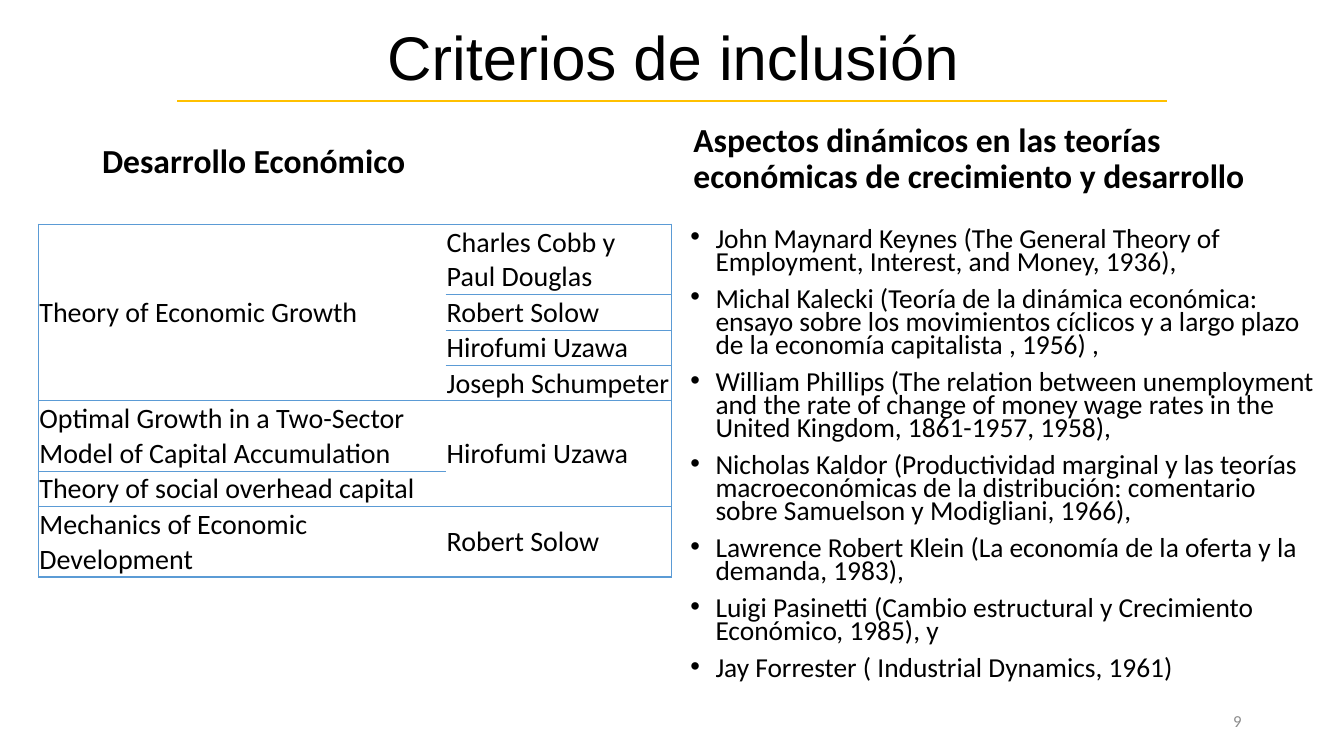
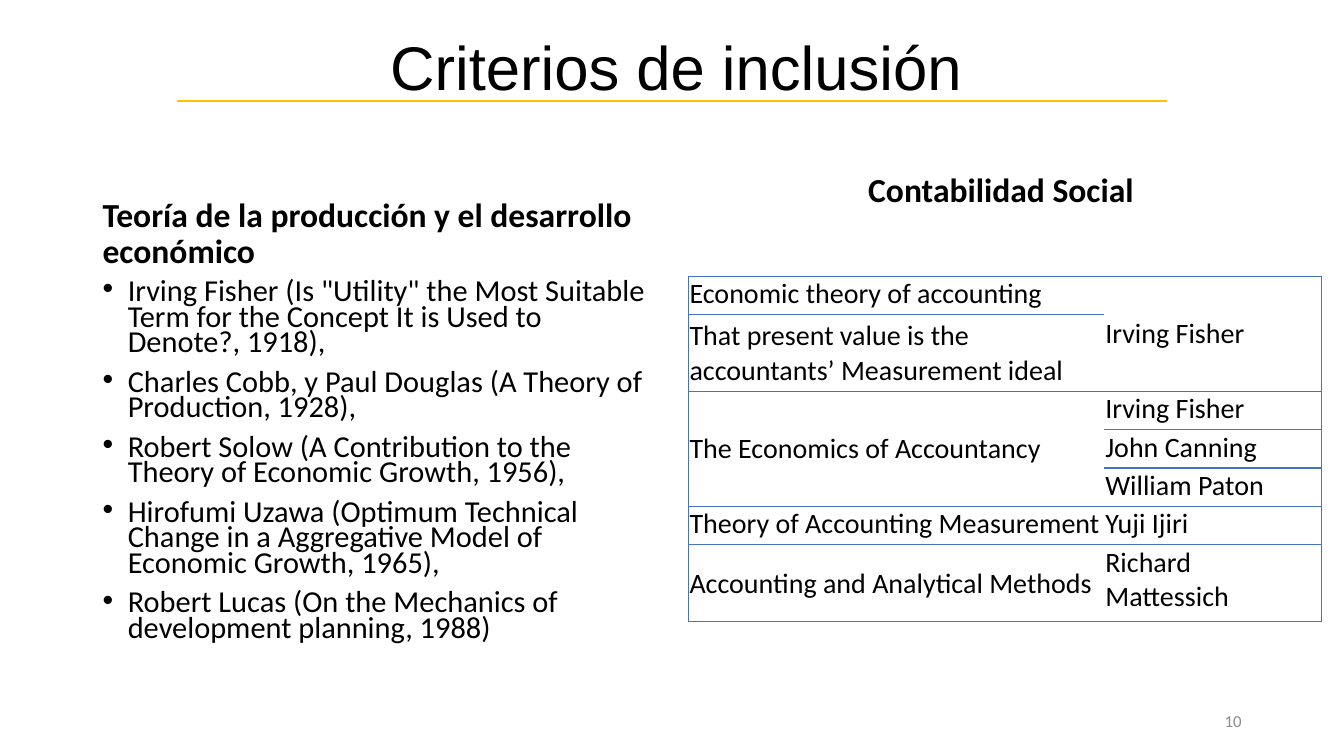
from lxml.etree import SubElement
from pptx import Presentation
from pptx.dml.color import RGBColor
from pptx.enum.shapes import MSO_CONNECTOR
from pptx.enum.text import MSO_ANCHOR, PP_ALIGN
from pptx.oxml.ns import qn
from pptx.util import Pt

BLACK = RGBColor(0x00, 0x00, 0x00)
WHITE = RGBColor(0xFF, 0xFF, 0xFF)
GRAY = RGBColor(0x8C, 0x8C, 0x8C)
GOLD = RGBColor(0xFF, 0xC0, 0x00)
SKY = RGBColor(0x5B, 0x9B, 0xD5)
BLUE = RGBColor(0x44, 0x72, 0xC4)
PLAIN_TABLE = "{2D5ABB26-0587-4C30-8999-92F81FD0307C}"
TITLE = "Criterios de inclusión"
LINE = 25.2


def style_run(p, size, color=BLACK, font="Calibri", bold=False):
    """Format the runs of a paragraph."""
    for r in p.runs:
        r.font.size, r.font.name, r.font.bold = Pt(size), font, bold
        r.font.color.rgb = color


def add_text(s, box, text, size, anchor=MSO_ANCHOR.TOP, align=PP_ALIGN.LEFT,
             spacing=None, before=0, **style):
    """Add a wrapped text box, one paragraph per line of text."""
    sp = s.shapes.add_textbox(*map(Pt, box))
    tf = sp.text_frame
    tf.word_wrap = True
    tf.vertical_anchor = anchor
    tf.text = text
    for p in tf.paragraphs:
        p.alignment, p.space_before = align, Pt(before)
        if spacing:
            p.line_spacing = spacing
        style_run(p, size, **style)
    return sp


def add_heading(s, box, text, align=PP_ALIGN.LEFT):
    """Add the bold heading of a column."""
    add_text(s, box, text, 24, MSO_ANCHOR.BOTTOM, align, 0.9, 10, bold=True)


def add_bullets(s, box, items, size):
    """Add a tightly set bulleted list."""
    sp = add_text(s, box, "\n".join(items), size, spacing=0.7, before=10)
    for p in sp.text_frame.paragraphs:
        pPr = p._p.get_or_add_pPr()
        pPr.set("marL", str(Pt(18)))
        pPr.set("indent", str(-Pt(18)))
        SubElement(pPr, qn("a:buFont"), typeface="Arial")
        SubElement(pPr, qn("a:buChar"), char="•")


def add_borders(cell, sides, color):
    """Draw one-point borders on the given sides of a cell."""
    tcPr = cell._tc.get_or_add_tcPr()
    for side in sides:
        ln = SubElement(tcPr, qn(f"a:ln{side}"), w=str(Pt(1)))
        fill = SubElement(ln, qn("a:solidFill"))
        SubElement(fill, qn("a:srgbClr"), val=str(color))


def add_works_table(s, left, top, cols, heights, rows, color, top_cells=()):
    """Add a table of works and authors; None continues the cell above."""
    frame = s.shapes.add_table(len(rows), len(cols), Pt(left), Pt(top),
                               Pt(sum(cols)), Pt(sum(heights)))
    table = frame.table
    table.first_row = table.horz_banding = False
    table._tbl.tblPr.find(qn("a:tableStyleId")).text = PLAIN_TABLE
    for column, width in zip(table.columns, cols):
        column.width = Pt(width)
    for row, height in zip(table.rows, heights):
        row.height = Pt(height)
    for j, outer in enumerate("LR"):
        start = 0
        for i, row in enumerate(rows):
            cell = table.cell(i, j)
            add_borders(cell, outer if row[j] is None else outer + "TB", color)
            cell.fill.solid()
            cell.fill.fore_color.rgb = WHITE
            cell.margin_left = cell.margin_right = cell.margin_top = Pt(0.72)
            cell.margin_bottom = Pt(0)
            if row[j] is not None:
                start = i
                cell.text = row[j]
                style_run(cell.text_frame.paragraphs[0], 20)
                at_top = (i, j) in top_cells
                cell.vertical_anchor = MSO_ANCHOR.TOP if at_top else MSO_ANCHOR.MIDDLE
            if row[j] is None and (i + 1 == len(rows) or rows[i + 1][j] is not None):
                table.cell(start, j).merge(cell)


def add_base(prs, title_box, number):
    """Add a slide with its title, gold rule and slide number."""
    s = prs.slides.add_slide(prs.slide_layouts[6])
    add_text(s, title_box, TITLE, 44, MSO_ANCHOR.MIDDLE, PP_ALIGN.CENTER, 0.9,
             font="Arial")
    add_text(s, (678, 500.4, 216, 28.8), str(number), 12, MSO_ANCHOR.MIDDLE,
             PP_ALIGN.RIGHT, color=GRAY)
    rule = s.shapes.add_connector(MSO_CONNECTOR.STRAIGHT, Pt(126.7), Pt(72),
                                  Pt(833.8), Pt(72))
    rule.line.color.rgb, rule.line.width = GOLD, Pt(1.5)
    SubElement(rule._element.spPr, qn("a:effectLst"))
    return s


def build_development(prs):
    """Build the slide on economic development and dynamic theories."""
    s = add_base(prs, (67, 10.8, 828, 64.8), 9)
    add_heading(s, (65.8, 85, 406, 47.5), "Desarrollo Económico")
    add_works_table(s, 27.4, 160.2, (291, 161),
                    [LINE * n for n in (2, 1, 1, 1, 2, 1, 2)], [
        ("Theory of Economic Growth", "Charles Cobb y Paul Douglas"),
        (None, "Robert Solow"),
        (None, "Hirofumi Uzawa"),
        (None, "Joseph Schumpeter"),
        ("Optimal Growth in a Two-Sector Model of Capital Accumulation",
         "Hirofumi Uzawa"),
        ("Theory of social overhead capital", None),
        ("Mechanics of Economic Development", "Robert Solow"),
    ], SKY)
    add_heading(s, (488.2, 78.5, 408, 64.8),
                "Aspectos dinámicos en las teorías económicas de crecimiento y desarrollo")
    add_bullets(s, (486, 160.6, 462.2, 368.6), [
        "John Maynard Keynes (The General Theory of Employment, Interest, and Money, 1936),",
        "Michal Kalecki (Teoría de la dinámica económica: ensayo sobre los movimientos "
        "cíclicos y a largo plazo de la economía capitalista , 1956) ,",
        "William Phillips (The relation between unemployment and the rate of change of "
        "money wage rates in the United Kingdom, 1861-1957, 1958),",
        "Nicholas Kaldor (Productividad marginal y las teorías macroeconómicas de la "
        "distribución: comentario sobre Samuelson y Modigliani, 1966),",
        "Lawrence Robert Klein (La economía de la oferta y la demanda, 1983),",
        "Luigi Pasinetti (Cambio estructural y Crecimiento Económico, 1985), y",
        "Jay Forrester ( Industrial Dynamics, 1961)",
    ], 19.6)


def build_accounting(prs):
    """Build the slide on production theory and social accounting."""
    s = add_base(prs, (69.1, 13.7, 828, 73.4), 10)
    add_heading(s, (66.2, 132.5, 406, 64.8),
                "Teoría de la producción y el desarrollo económico")
    add_bullets(s, (66.2, 197.3, 406, 290.2), [
        "Irving Fisher (Is \"Utility\" the Most Suitable Term for the Concept It is "
        "Used to Denote?, 1918),",
        "Charles Cobb, y Paul Douglas (A Theory of Production, 1928),",
        "Robert Solow (A Contribution to the Theory of Economic Growth, 1956),",
        "Hirofumi Uzawa (Optimum Technical Change in a Aggregative Model of Economic "
        "Growth, 1965),",
        "Robert Lucas (On the Mechanics of development planning, 1988)",
    ], 21.7)
    add_heading(s, (488.9, 88.6, 452.2, 64.8), "Contabilidad Social", PP_ALIGN.CENTER)
    add_works_table(s, 491.8, 197.3, (297, 155.2),
                    [27.4 * n for n in (1, 2, 1, 1, 1, 1, 2)], [
        ("Economic theory of accounting", "Irving Fisher"),
        ("That present value is the accountants’ Measurement ideal", None),
        ("The Economics of Accountancy", "Irving Fisher"),
        (None, "John Canning"),
        (None, "William Paton"),
        ("Theory of Accounting Measurement", "Yuji Ijiri"),
        ("Accounting and Analytical Methods", "Richard Mattessich"),
    ], BLUE, {(0, 0), (5, 0), (2, 1), (3, 1), (4, 1), (5, 1), (6, 1)})


def main():
    """Build and save the presentation."""
    prs = Presentation()
    prs.slide_width, prs.slide_height = Pt(960), Pt(540)
    build_development(prs)
    build_accounting(prs)
    prs.save("out.pptx")


if __name__ == "__main__":
    main()
